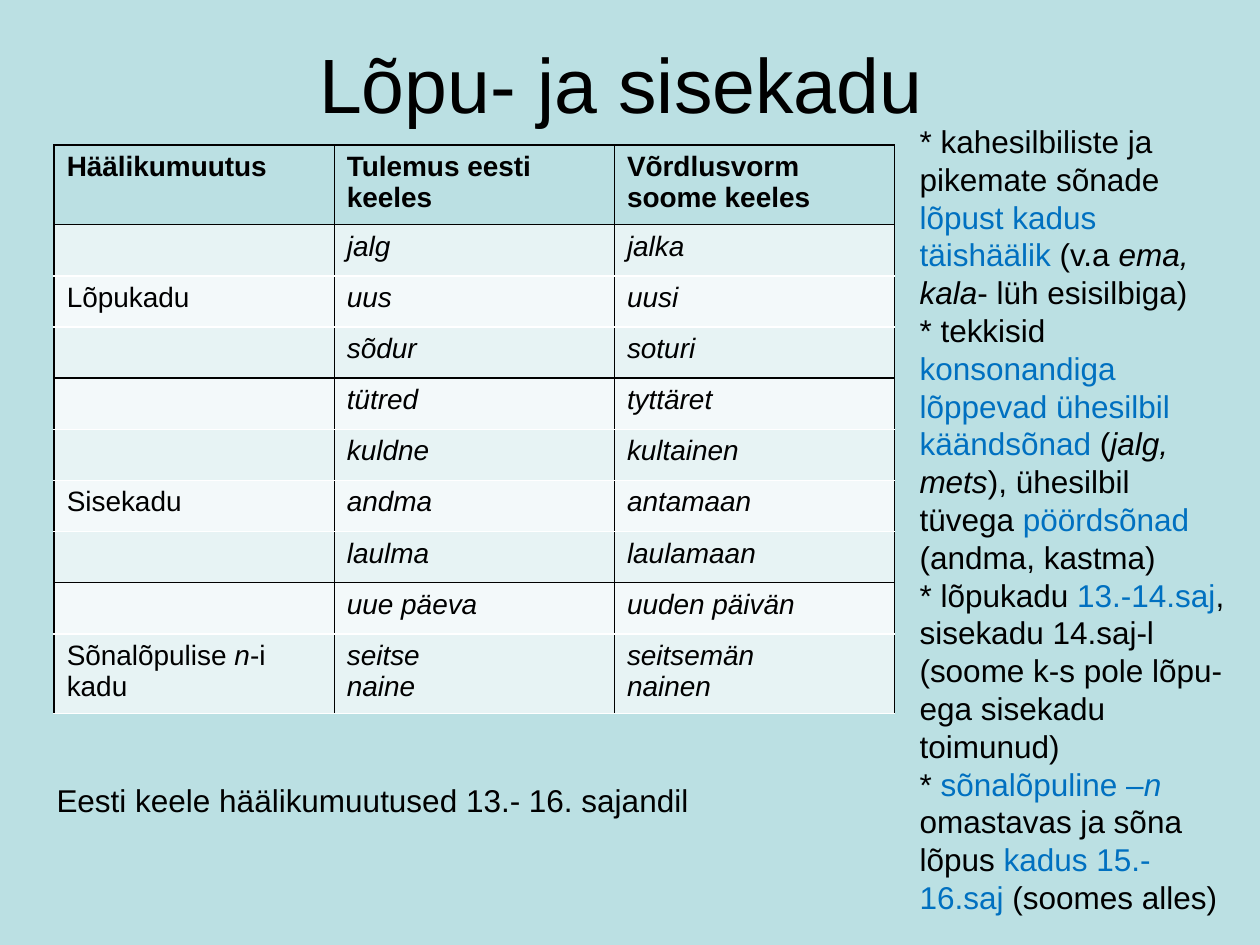
from dataclasses import dataclass

from lxml import etree
from pptx import Presentation
from pptx.dml.color import RGBColor
from pptx.enum.text import MSO_ANCHOR, PP_ALIGN
from pptx.oxml.ns import qn
from pptx.util import Inches, Pt

CENTER = PP_ALIGN.CENTER
LEFT = PP_ALIGN.LEFT
MIDDLE = MSO_ANCHOR.MIDDLE
TOP = MSO_ANCHOR.TOP


@dataclass(frozen=True)
class Theme:
    """Colours, font and type sizes of the deck."""
    font: str = "Arial"
    ink: str = "000000"
    accent: str = "0070C0"
    ground: str = "BBE0E3"
    bands: tuple = ("F3F9FA", "E7F3F4")
    divider: str = "FFFFFF"
    title_size: int = 44
    body_size: int = 18
    cell_size: int = 16


THEME = Theme()
HEADER = ["Häälikumuutus", "Tulemus eesti keeles", "Võrdlusvorm soome keeles"]
SOUND_CHANGES = [
    ([], ["jalg"], ["jalka"]),
    ([("Lõpukadu", "")], ["uus"], ["uusi"]),
    ([], ["sõdur"], ["soturi"]),
    ([], ["tütred"], ["tyttäret"]),
    ([], ["kuldne"], ["kultainen"]),
    ([("Sisekadu", "")], ["andma"], ["antamaan"]),
    ([], ["laulma"], ["laulamaan"]),
    ([], ["uue päeva"], ["uuden päivän"]),
    ([("Sõnalõpulise ", ""), ("n", "i"), ("-i kadu", "")],
     ["seitse", "naine"], ["seitsemän", "nainen"]),
]
GROUP_ENDS = {0, 3, 7}
NOTES = [
    [("* kahesilbiliste ja pikemate sõnade ", ""), ("lõpust kadus täishäälik ", "a"),
     ("(v.a ", ""), ("ema, kala", "i"), ("- lüh esisilbiga)", "")],
    [("* tekkisid ", ""), ("konsonandiga lõppevad ühesilbil käändsõnad", "a"),
     (" (", ""), ("jalg, mets", "i"), ("), ühesilbil tüvega ", ""),
     ("pöördsõnad", "a"), (" (andma, kastma)", "")],
    [("* lõpukadu ", ""), ("13.-14.saj", "a"), (", sisekadu 14.saj-l", "")],
    [("(soome k-s pole lõpu- ega sisekadu toimunud)", "")],
    [("* ", ""), ("sõnalõpuline –", "a"), ("n", "ai"),
     (" omastavas ja sõna lõpus ", ""), ("kadus 15.-16.saj", "a"), (" (soomes alles)", "")],
]


def write(frame, paragraphs, size, align=LEFT):
    """Fill a text frame; run marks are a (accent), b (bold) and i (italic)."""
    for index, spans in enumerate(paragraphs):
        para = frame.add_paragraph() if index else frame.paragraphs[0]
        para.alignment = align
        for text, marks in spans:
            span = para.add_run()
            span.text = text
            font = span.font
            font.name, font.size = THEME.font, Pt(size)
            font.bold, font.italic = "b" in marks, "i" in marks
            font.color.rgb = RGBColor.from_string(THEME.accent if "a" in marks else THEME.ink)


def add_text(page, box, paragraphs, size, align=LEFT, anchor=TOP):
    """Add a wrapping text box."""
    frame = page.shapes.add_textbox(*map(Inches, box)).text_frame
    frame.word_wrap = True
    frame.vertical_anchor = anchor
    write(frame, paragraphs, size, align)


def set_borders(cell, top, bottom):
    """Draw ink sides and the given top and bottom lines around a cell."""
    properties = cell._tc.get_or_add_tcPr()
    sides = (("a:lnL", THEME.ink), ("a:lnR", THEME.ink), ("a:lnT", top), ("a:lnB", bottom))
    for index, (tag, color) in enumerate(sides):
        line = etree.Element(qn(tag), w=str(Pt(1)))
        fill = etree.SubElement(line, qn("a:solidFill"))
        etree.SubElement(fill, qn("a:srgbClr"), val=color)
        properties.insert(index, line)


def add_sound_table(page, box):
    """Add the table of sound changes with grouped rows."""
    rows = [[[[(label, "b")]] for label in HEADER]]
    for label, *forms in SOUND_CHANGES:
        rows.append([[label]] + [[[(word, "i")] for word in words] for words in forms])
    table = page.shapes.add_table(len(rows), len(HEADER), *map(Inches, box)).table
    table.first_row = table.horz_banding = False
    for number, row in enumerate(rows):
        top = THEME.ink if number == 0 or number - 1 in GROUP_ENDS else THEME.divider
        bottom = THEME.ink if number in GROUP_ENDS else THEME.divider
        fill = THEME.bands[number % 2] if number else THEME.ground
        for column, paragraphs in enumerate(row):
            cell = table.cell(number, column)
            cell.fill.solid()
            cell.fill.fore_color.rgb = RGBColor.from_string(fill)
            set_borders(cell, top, bottom)
            write(cell.text_frame, paragraphs, THEME.cell_size)


def build_slide(deck):
    """Add the slide on loss of final and inner vowels."""
    page = deck.slides.add_slide(deck.slide_layouts[6])
    page.background.fill.solid()
    page.background.fill.fore_color.rgb = RGBColor.from_string(THEME.ground)
    add_text(page, (0.43, 0.03, 9, 1.25), [[("Lõpu- ja sisekadu", "")]],
             THEME.title_size, CENTER, MIDDLE)
    add_sound_table(page, (0.43, 1.15, 6.67, 4.06))
    add_text(page, (0.35, 6.15, 5.98, 0.4),
             [[("Eesti keele häälikumuutused 13.- 16. sajandil", "")]], THEME.body_size)
    add_text(page, (7.2, 0.92, 2.66, 7.07), NOTES, THEME.body_size)


def main():
    """Build and save the deck."""
    deck = Presentation()
    deck.slide_width, deck.slide_height = Inches(10), Inches(7.5)
    build_slide(deck)
    deck.save("out.pptx")


if __name__ == "__main__":
    main()
